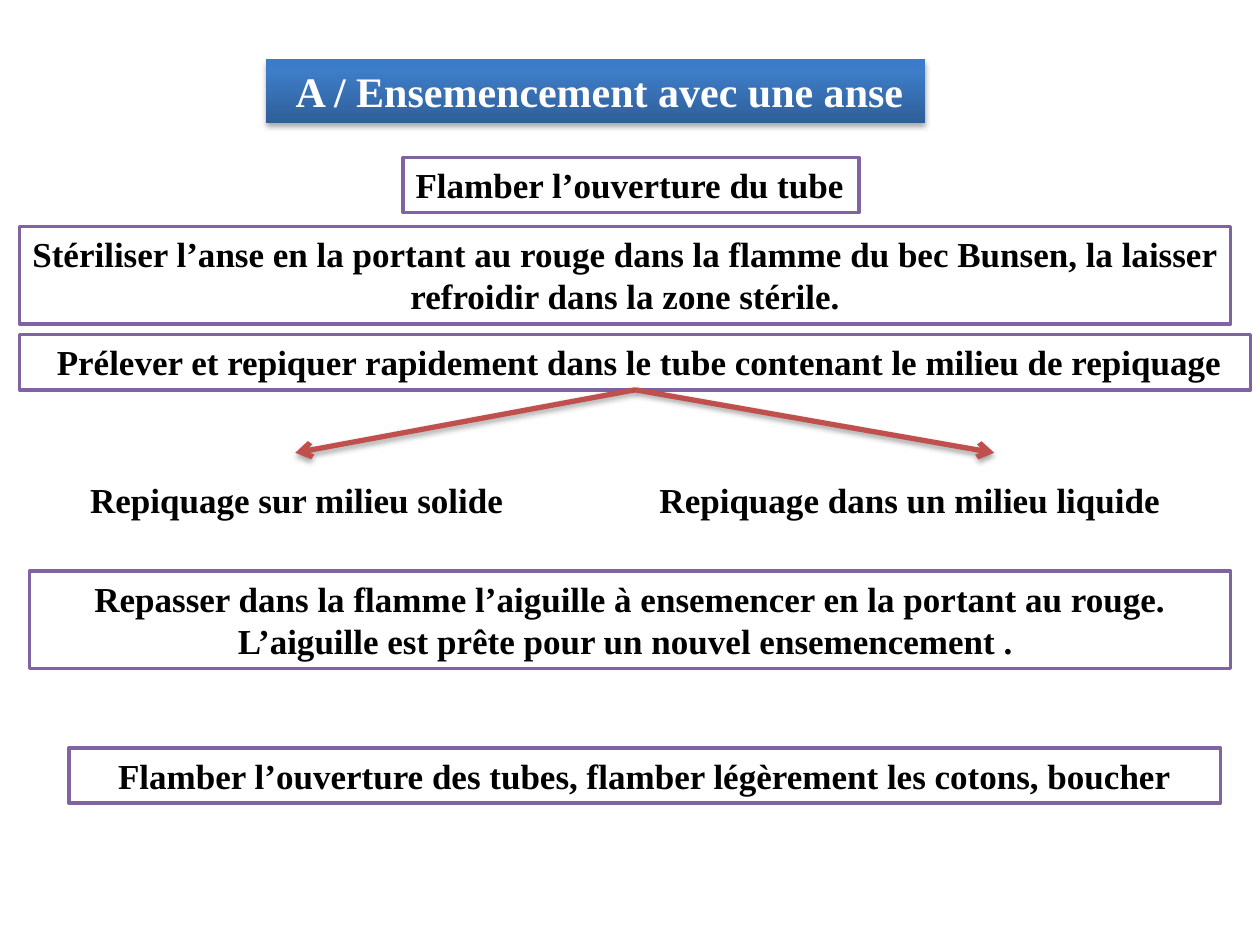
from dataclasses import dataclass

from lxml.etree import SubElement as Sub
from pptx import Presentation
from pptx.dml.color import RGBColor as RGB
from pptx.enum.shapes import MSO_CONNECTOR as Conn, MSO_SHAPE as Kind
from pptx.enum.text import MSO_ANCHOR as Anchor, MSO_AUTO_SIZE as Fit, PP_ALIGN as Align
from pptx.oxml import parse_xml
from pptx.oxml.ns import nsdecls, qn
from pptx.util import Pt


@dataclass(frozen=True)
class Theme:
    font: str = "Times New Roman"
    head: int = 24
    body: int = 20
    ink: str = "000000"
    paper: str = "FFFFFF"
    frame: str = "8064A2"
    arrow: str = "C0504D"
    shade: tuple = ((0, "2F5F99"), (80, "3D7CC7"), (100, "3A7CCB"))


class Deck:
    def __init__(self, theme):
        self.theme = theme
        self.prs = Presentation()
        self.prs.slide_width, self.prs.slide_height = Pt(720), Pt(540)
        self.slide = self.prs.slides.add_slide(self.prs.slide_layouts[6])

    def words(self, shape, text, size, color, align, wrap=True):
        frame = shape.text_frame
        frame.text = text
        frame.word_wrap = wrap
        frame.auto_size = Fit.SHAPE_TO_FIT_TEXT
        frame.vertical_anchor = Anchor.TOP
        para = frame.paragraphs[0]
        para.alignment = align
        font = para.runs[0].font
        font.name, font.size, font.bold = self.theme.font, Pt(size), True
        font.color.rgb = RGB.from_string(color)

    def glow(self, props):
        """Add a soft drop shadow below the element."""
        props.append(parse_xml(
            f'<a:effectLst {nsdecls("a")}><a:outerShdw blurRad="40000" dist="23000" '
            'dir="5400000" rotWithShape="0"><a:srgbClr val="000000">'
            '<a:alpha val="35000"/></a:srgbClr></a:outerShdw></a:effectLst>'))

    def title(self, text, *box):
        shape = self.slide.shapes.add_shape(Kind.RECTANGLE, *map(Pt, box))
        shape.line.fill.background()
        stops = "".join(f'<a:gs pos="{pos * 1000}"><a:srgbClr val="{color}"/></a:gs>'
                        for pos, color in self.theme.shade)
        props = shape.element.spPr
        props.find(qn("a:prstGeom")).addnext(parse_xml(
            f'<a:gradFill {nsdecls("a")} rotWithShape="1"><a:gsLst>{stops}</a:gsLst>'
            '<a:lin ang="16200000" scaled="0"/></a:gradFill>'))
        self.glow(props)
        self.words(shape, text, self.theme.head, self.theme.paper, Align.CENTER)

    def step(self, text, *box, align=Align.CENTER, wrap=True):
        shape = self.slide.shapes.add_shape(Kind.RECTANGLE, *map(Pt, box))
        shape.shadow.inherit = False
        shape.fill.solid()
        shape.fill.fore_color.rgb = RGB.from_string(self.theme.paper)
        shape.line.color.rgb = RGB.from_string(self.theme.frame)
        shape.line.width = Pt(2)
        self.words(shape, text, self.theme.body, self.theme.ink, align, wrap)
        return shape

    def label(self, text, *box, align=Align.CENTER):
        shape = self.slide.shapes.add_textbox(*map(Pt, box))
        self.words(shape, text, self.theme.body, self.theme.ink, align)

    def arrow(self, start, x, y):
        line = self.slide.shapes.add_connector(Conn.STRAIGHT, 0, 0, Pt(x), Pt(y))
        line.begin_connect(start, 2)
        line.line.color.rgb = RGB.from_string(self.theme.arrow)
        line.line.width = Pt(3)
        props = line.element.spPr
        Sub(props.find(qn("a:ln")), qn("a:tailEnd"), type="arrow")
        self.glow(props)


def main():
    deck = Deck(Theme())
    one, two = 31.5, 55.7  # heights for one and two lines of text

    # Title
    deck.title(" A / Ensemencement avec une anse", 152, 34, 376.5, 36.35)

    # Preparation steps
    deck.step("Stériliser l’anse en la portant au rouge dans la flamme du bec Bunsen, "
              "la laisser refroidir dans la zone stérile.", 11.25, 129.4, 692, two)
    deck.step("Flamber l’ouverture du tube", 230.4, 90, 260.6, one,
              align=Align.LEFT, wrap=False)
    pick = deck.step(" Prélever et repiquer rapidement dans le tube contenant "
                     "le milieu de repiquage", 11.25, 191.25, 703.4, one)

    # Two kinds of medium
    for x in (168.75, 568.1):
        deck.arrow(pick, x, 258.75)
    deck.label(" Repiquage sur milieu solide", 39.4, 270, 360, one, align=Align.LEFT)
    deck.label(" Repiquage dans un milieu liquide", 337.5, 270, 360, one)

    # Closing steps
    deck.step("Repasser dans la flamme l’aiguille à ensemencer en la portant au rouge. "
              "L’aiguille est prête pour un nouvel ensemencement . ",
              16.9, 326.25, 686.25, two)
    deck.step("Flamber l’ouverture des tubes, flamber légèrement les cotons, boucher",
              39.4, 427.5, 658.1, one)

    deck.prs.save("out.pptx")


if __name__ == "__main__":
    main()
